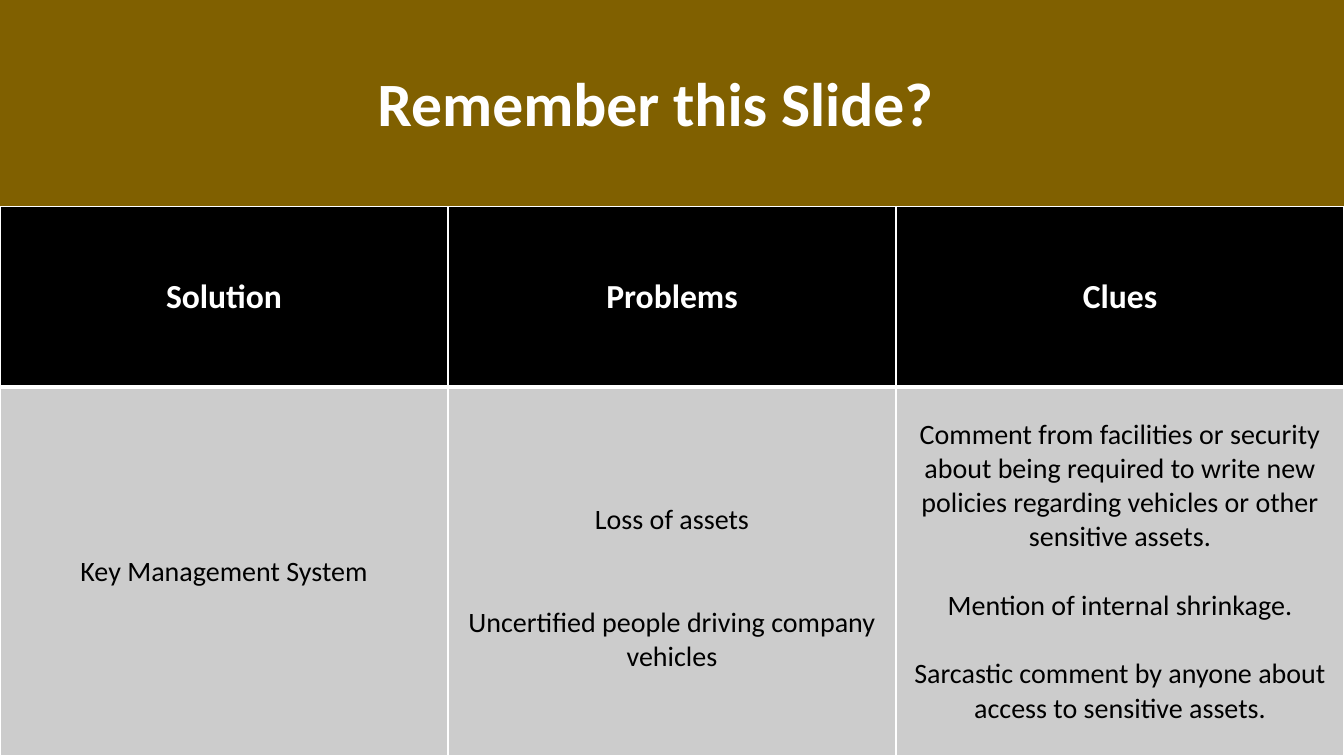
from lxml.etree import SubElement
from pptx import Presentation
from pptx.dml.color import RGBColor
from pptx.enum.shapes import MSO_SHAPE
from pptx.enum.text import MSO_ANCHOR, PP_ALIGN
from pptx.oxml.ns import qn
from pptx.util import Inches, Pt

WHITE = RGBColor(0xFF, 0xFF, 0xFF)
BLACK = RGBColor(0x00, 0x00, 0x00)
GRAY = RGBColor(0xCC, 0xCC, 0xCC)
BROWN = RGBColor(0x80, 0x60, 0x00)

SLIDE_W, SLIDE_H = 13.33, 7.5
TABLE_TOP = 2.05
ROW_HEIGHTS = [1.79, 3.66]
LINE = 24.4  # height in points of one line of body text

HEADERS = ["Solution", "Problems", "Clues"]
# One entry per column: paragraphs, gap between them and extra space on top
BODY = [
    (["Key Management System"], 0, 0),
    (["Loss of assets", "Uncertified people driving company vehicles"], 2 * LINE, LINE),
    (["Comment from facilities or security about being required to write new "
      "policies regarding vehicles or other sensitive assets.",
      "Mention of internal shrinkage.",
      "Sarcastic comment by anyone about access to sensitive assets."], LINE, 0),
]


class SlideBuilder:
    font = "Calibri"

    def __init__(self, slide):
        self.s = slide

    def background(self, color):
        fill = self.s.background.fill
        fill.solid()
        fill.fore_color.rgb = color

    def add_text(self, tf, texts, size, color, bold=False, gap=0):
        """Fill a text frame with centred paragraphs, gap points apart."""
        for i, text in enumerate(texts):
            p = tf.add_paragraph() if i else tf.paragraphs[0]
            p.alignment = PP_ALIGN.CENTER
            if i:
                p.space_before = Pt(gap)
            r = p.add_run()
            r.text = text
            r.font.name = self.font
            r.font.size = Pt(size)
            r.font.bold = bold
            r.font.color.rgb = color

    def title(self, text, top, height):
        sp = self.s.shapes.add_shape(MSO_SHAPE.RECTANGLE, 0, Inches(top),
                                     Inches(SLIDE_W), Inches(height))
        sp.shadow.inherit = False
        sp.fill.solid()
        sp.fill.fore_color.rgb = BROWN
        sp.line.fill.background()
        tf = sp.text_frame
        tf.word_wrap = True
        tf.vertical_anchor = MSO_ANCHOR.MIDDLE
        tf.margin_right = Inches(0.42)
        self.add_text(tf, [text], 44, WHITE, bold=True)
        tf.paragraphs[0].line_spacing = 0.9

    def borders(self, cell, top, bottom):
        """White cell borders; top and bottom widths in points, sides 1 pt."""
        tc_pr = cell._tc.get_or_add_tcPr()
        for side, width in zip("LRTB", (1, 1, top, bottom)):
            ln = SubElement(tc_pr, qn(f"a:ln{side}"), w=str(Pt(width)))
            SubElement(SubElement(ln, qn("a:solidFill")), qn("a:srgbClr"), val=str(WHITE))

    def cell(self, cell, texts, size, color, fill, bold=False, gap=0, top=1, bottom=1):
        self.borders(cell, top, bottom)
        cell.fill.solid()
        cell.fill.fore_color.rgb = fill
        cell.vertical_anchor = MSO_ANCHOR.MIDDLE
        self.add_text(cell.text_frame, texts, size, color, bold, gap)

    def table(self, headers, body):
        table = self.s.shapes.add_table(2, len(headers), 0, Inches(TABLE_TOP),
                                        Inches(SLIDE_W), Inches(sum(ROW_HEIGHTS))).table
        table.first_row = table.horz_banding = False
        for row, height in zip(table.rows, ROW_HEIGHTS):
            row.height = Inches(height)
        for i, (header, (texts, gap, extra_top)) in enumerate(zip(headers, body)):
            table.columns[i].width = Inches(SLIDE_W / len(headers))
            self.cell(table.cell(0, i), [header], 24, WHITE, BLACK, bold=True, bottom=3)
            body_cell = table.cell(1, i)
            self.cell(body_cell, texts, 20, BLACK, GRAY, gap=gap, top=3)
            body_cell.margin_top = Inches(0.05) + Pt(extra_top)


def main():
    prs = Presentation()
    prs.slide_width, prs.slide_height = Inches(SLIDE_W), Inches(SLIDE_H)
    builder = SlideBuilder(prs.slides.add_slide(prs.slide_layouts[6]))
    builder.background(BROWN)
    builder.title("Remember this Slide?", 0.33, 1.45)
    builder.table(HEADERS, BODY)
    prs.save("out.pptx")


if __name__ == "__main__":
    main()
